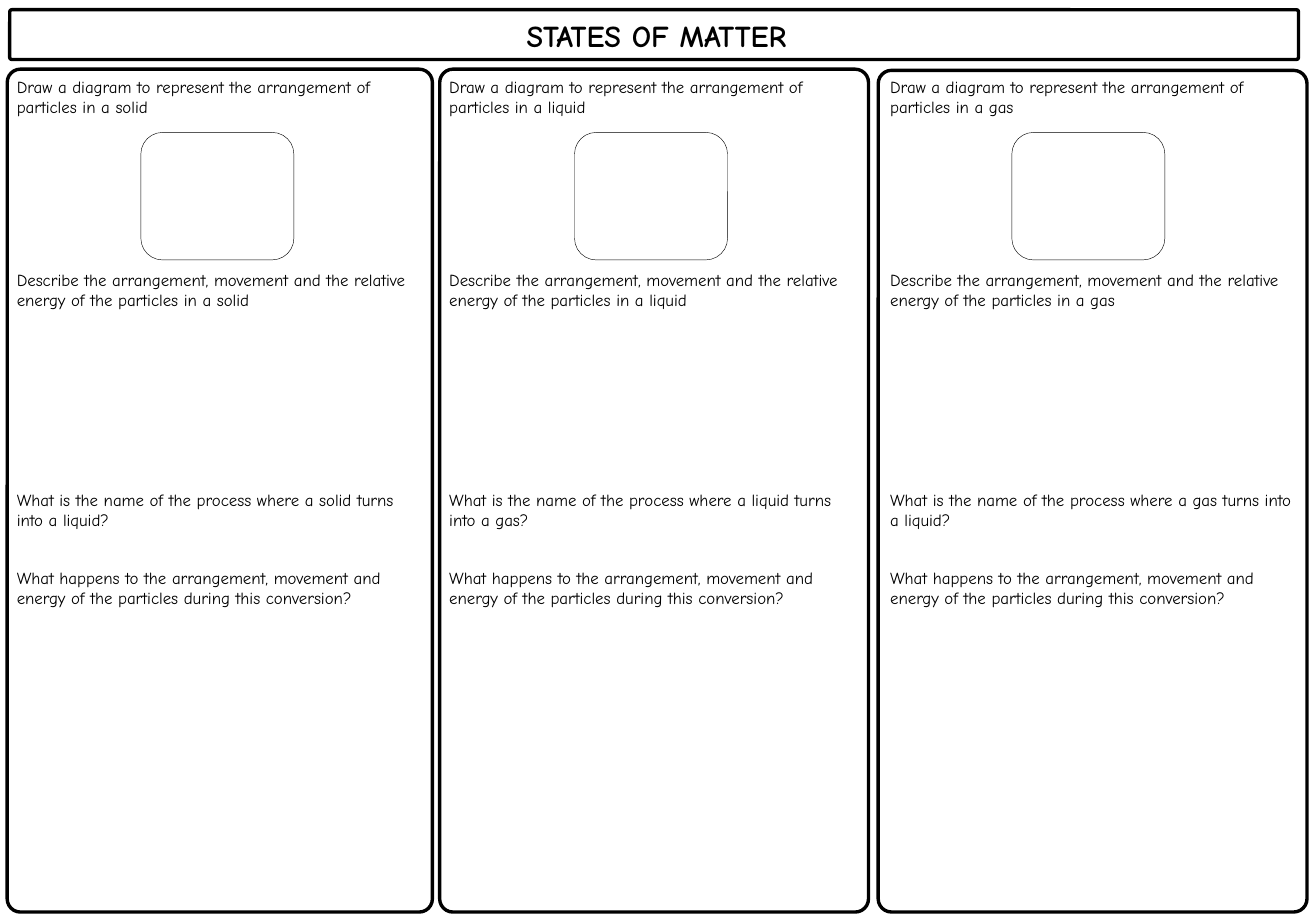
from pptx import Presentation
from pptx.dml.color import RGBColor
from pptx.enum.shapes import MSO_SHAPE
from pptx.enum.text import PP_ALIGN
from pptx.util import Inches, Pt

ROUNDED = MSO_SHAPE.ROUNDED_RECTANGLE
LEFT, CENTER = PP_ALIGN.LEFT, PP_ALIGN.CENTER
COLORS = {"ink": "000000"}

# state, state it turns into, frame left, top, width, question left, diagram left
STATES = [
    ("solid", "liquid", 0.06, 0.57, 3.5, 0.04, 1.16),
    ("liquid", "gas", 3.62, 0.57, 3.53, 3.6, 4.73),
    ("gas", "liquid", 7.23, 0.58, 3.53, 7.23, 8.33),
]
FRAME_BOTTOM = 7.51

# question, space left above it in points for the answer before
QUESTIONS = [
    ("Draw a diagram to represent the arrangement of particles in a {state}", 0),
    ("Describe the arrangement, movement and the relative energy of the "
     "particles in a {state}", 90.5),
    ("What is the name of the process where a {state} turns into a {product}?", 106.5),
    ("What happens to the arrangement, movement and energy of the particles "
     "during this conversion?", 22),
]


class Worksheet:
    font = "Comic Neue"
    ink = RGBColor.from_string(COLORS["ink"])

    def __init__(self, slide):
        self.slide = slide

    def frame(self, left, top, width, height, weight, rounding):
        outline = self.slide.shapes.add_shape(
            ROUNDED, Inches(left), Inches(top), Inches(width), Inches(height))
        outline.adjustments[0] = rounding
        outline.shadow.inherit = False
        outline.fill.background()
        outline.line.color.rgb = self.ink
        outline.line.width = Pt(weight)

    def text(self, left, top, width, height, lines, size, bold=False, align=LEFT):
        box = self.slide.shapes.add_textbox(
            Inches(left), Inches(top), Inches(width), Inches(height))
        body = box.text_frame
        body.word_wrap = True
        for index, (words, gap) in enumerate(lines):
            paragraph = body.add_paragraph() if index else body.paragraphs[0]
            paragraph.alignment = align
            paragraph.space_before = Pt(gap)
            run = paragraph.add_run()
            run.text = words
            run.font.name = self.font
            run.font.size = Pt(size)
            run.font.bold = bold
            run.font.color.rgb = self.ink


def main():
    deck = Presentation()
    deck.slide_width, deck.slide_height = Inches(65 / 6), Inches(7.6)
    sheet = Worksheet(deck.slides.add_slide(deck.slide_layouts[6]))

    # Title bar
    sheet.frame(0.08, 0.08, 10.61, 0.41, weight=2, rounding=0.045)
    sheet.text(0.04, 0.09, 10.73, 0.4, [("STATES OF MATTER", 0)],
               size=18, bold=True, align=CENTER)

    # One column per state of matter
    for state, product, left, top, width, question_left, diagram_left in STATES:
        sheet.frame(left, top, width, FRAME_BOTTOM - top, weight=2, rounding=0.031)
        questions = [(words.format(state=state, product=product), gap)
                     for words, gap in QUESTIONS]
        sheet.text(question_left, 0.58, 3.5, 4.98, questions, size=10)
        sheet.frame(diagram_left, 1.09, 1.26, 1.05, weight=0.25, rounding=0.17)

    deck.save("out.pptx")


if __name__ == "__main__":
    main()
